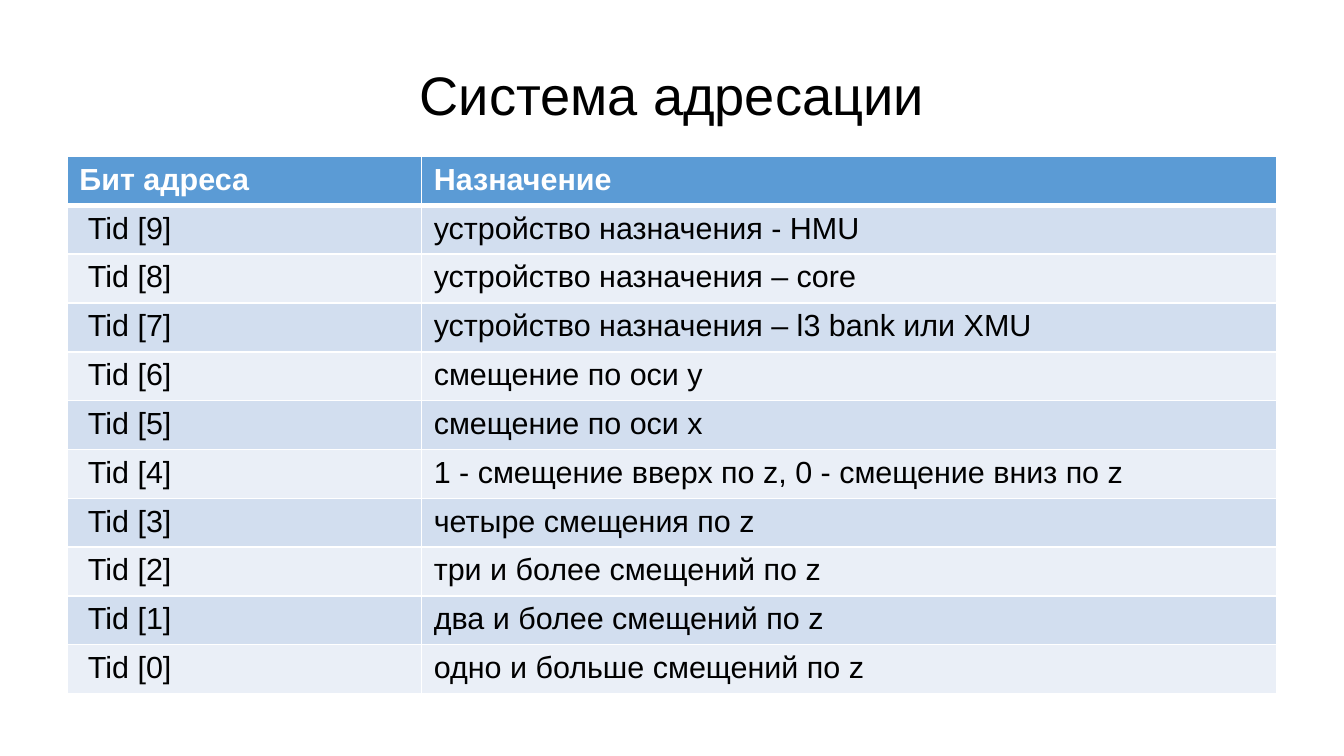
from lxml import etree
from pptx import Presentation
from pptx import util as u
from pptx.dml.color import RGBColor
from pptx.enum import text
from pptx.oxml.ns import qn

TITLE = "Система адресации"
HEADER = ("Бит адреса", "Назначение")
PURPOSES = [  # from bit 9 down to bit 0
    "устройство назначения - HMU",
    "устройство назначения – core",
    "устройство назначения – l3 bank или XMU",
    "смещение по оси у",
    "смещение по оси х",
    "1 - смещение вверх по z, 0 - смещение вниз по z",
    "четыре смещения по z",
    "три и более смещений по z",
    "два и более смещений по z",
    "одно и больше смещений по z",
]
COLORS = {"header": "5B9BD5", "odd": "D2DEEF", "even": "EAEFF7",
          "white": "FFFFFF", "black": "000000"}
LEFT, WIDTH = 39.7, 714.3
TITLE_TOP, TITLE_HEIGHT = 18, 74.6
TABLE_TOP, ROW_HEIGHT = 92.4, 27.3
COLUMN_WIDTHS = (209.2, 505.1)
CELL_MARGIN, BIT_MARGIN = 7.2, 12.2


def rgb(name):
    return RGBColor.from_string(COLORS[name])


def set_font(para, size, color, bold=False):
    font = para.font
    font.name, font.size, font.bold = "Arial", u.Pt(size), bold
    font.color.rgb = rgb(color)


def set_borders(cell, top, bottom):
    """Draw white borders; top and bottom are widths in points."""
    properties = cell._tc.get_or_add_tcPr()
    for side, width in (("L", 1), ("R", 1), ("T", top), ("B", bottom)):
        line = etree.SubElement(properties, qn(f"a:ln{side}"), w=str(u.Pt(width)))
        fill = etree.SubElement(line, qn("a:solidFill"))
        etree.SubElement(fill, qn("a:srgbClr"), val=COLORS["white"])


def add_title(page):
    box = page.shapes.add_textbox(u.Pt(LEFT), u.Pt(TITLE_TOP), u.Pt(WIDTH), u.Pt(TITLE_HEIGHT))
    frame = box.text_frame
    frame.word_wrap = True
    frame.vertical_anchor = text.MSO_ANCHOR.MIDDLE
    frame.margin_left = frame.margin_right = frame.margin_top = frame.margin_bottom = 0
    para = frame.paragraphs[0]
    para.text = TITLE
    para.alignment = text.PP_ALIGN.CENTER
    set_font(para, 32, "black")


def add_address_table(page):
    last_bit = len(PURPOSES) - 1
    rows = [HEADER] + [(f"Tid [{last_bit - i}]", purpose) for i, purpose in enumerate(PURPOSES)]
    table = page.shapes.add_table(len(rows), len(HEADER), u.Pt(LEFT), u.Pt(TABLE_TOP),
                                  u.Pt(WIDTH), u.Pt(ROW_HEIGHT * len(rows))).table
    for column, width in zip(table.columns, COLUMN_WIDTHS):
        column.width = u.Pt(width)
    for r, row in enumerate(rows):
        table.rows[r].height = u.Pt(ROW_HEIGHT)
        is_header = r == 0
        band = "header" if is_header else "odd" if r % 2 else "even"
        for c, words in enumerate(row):
            cell = table.cell(r, c)
            set_borders(cell, top=3 if r == 1 else 1, bottom=3 if is_header else 1)
            cell.fill.solid()
            cell.fill.fore_color.rgb = rgb(band)
            cell.margin_left = u.Pt(BIT_MARGIN if c == 0 and not is_header else CELL_MARGIN)
            para = cell.text_frame.paragraphs[0]
            para.text = words
            set_font(para, 18, "white" if is_header else "black", is_header)


def main():
    deck = Presentation()
    deck.slide_width, deck.slide_height = u.Pt(793.44), u.Pt(446.4)
    page = deck.slides.add_slide(deck.slide_layouts[6])
    add_title(page)
    add_address_table(page)
    deck.save("out.pptx")


if __name__ == "__main__":
    main()
